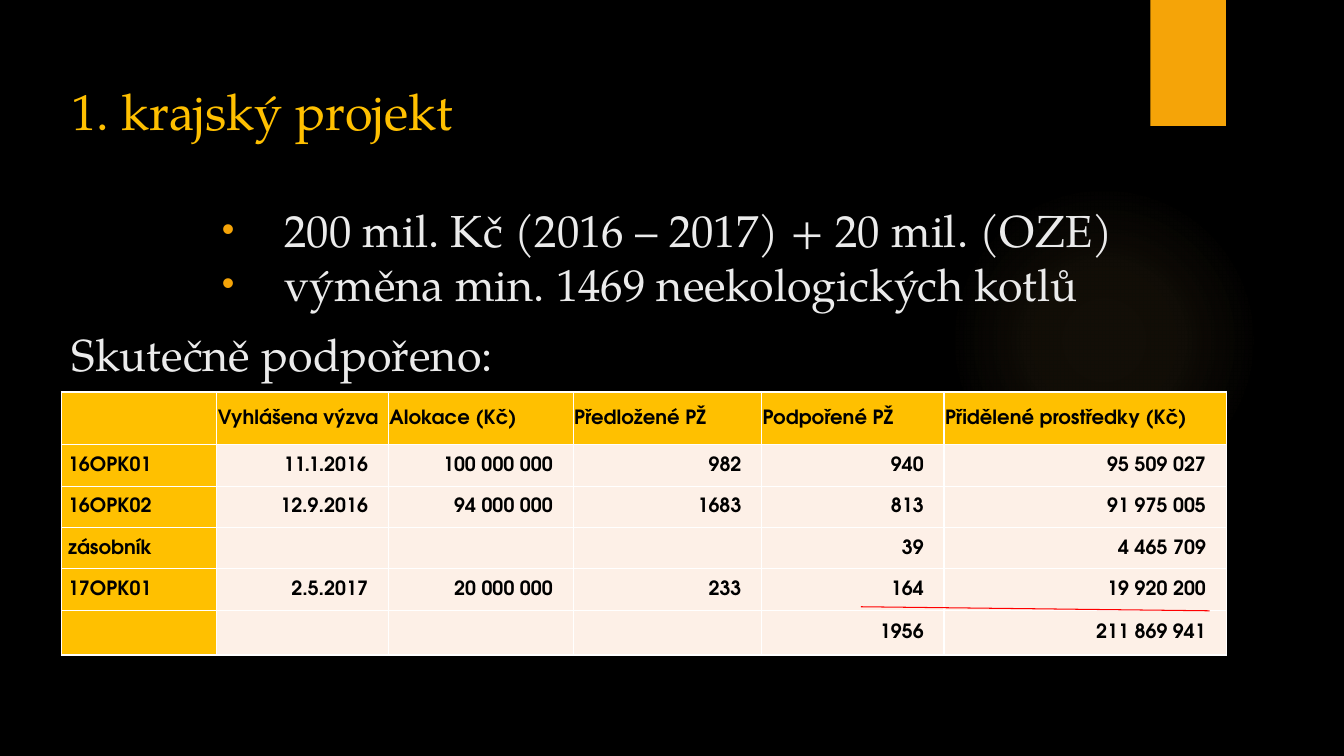
from lxml import etree
from pptx import Presentation, util as u
from pptx.dml.color import RGBColor
from pptx.enum import shapes, text
from pptx.oxml import ns, parse_xml

GOLD, CREAM, WHITE, BLACK = "FFC000", "FDF0E7", "FFFFFF", "000000"
LIGHT, ORANGE, GLOW, RED = "EBEBEB", "F5A408", "FAC96A", "FF0000"
SERIF, SANS = "TeX Gyre Pagella", "TeX Gyre Adventor"
NAMESPACE = "http://schemas.openxmlformats.org/drawingml/2006/main"


def color(value):
    return RGBColor.from_string(value)


def assign(target, values):
    for name, value in values.items():
        setattr(target, name, value)


def add_xml(parent, tag, **attributes):
    return etree.SubElement(parent, ns.qn(tag), attributes)


class Composer:
    title = {"name": SERIF, "size": u.Pt(36)}
    body = {"name": SERIF, "size": u.Pt(32)}
    cell = {"name": SANS, "size": u.Pt(14), "bold": True}

    def __init__(self, deck):
        self.page = deck.slides.add_slide(deck.slide_layouts[6])

    def background(self, fill):
        self.page.background.fill.solid()
        self.page.background.fill.fore_color.rgb = color(fill)

    def add_span(self, para, words, style, ink):
        span = para.add_run()
        span.text = words
        assign(span.font, style)
        span.font.color.rgb = color(ink)

    def shape(self, kind, frame, fill):
        shape = self.page.shapes.add_shape(kind, *map(u.Pt, frame))
        shape.shadow.inherit = False
        shape.fill.solid()
        shape.fill.fore_color.rgb = color(fill)
        shape.line.fill.background()
        return shape

    def glow(self, frame, fill, stops):
        shape = self.shape(shapes.MSO_SHAPE.OVAL, frame, fill)
        marks = "".join(
            f'<a:gs pos="{place * 1000}"><a:srgbClr val="{fill}">'
            f'<a:alpha val="{alpha * 1000}"/></a:srgbClr></a:gs>'
            for place, alpha in stops)
        gradient = parse_xml(
            f'<a:gradFill xmlns:a="{NAMESPACE}"><a:gsLst>{marks}</a:gsLst>'
            '<a:path path="circle"><a:fillToRect l="50000" t="50000" '
            'r="50000" b="50000"/></a:path></a:gradFill>')
        solid = shape._element.spPr.find(ns.qn("a:solidFill"))
        solid.getparent().replace(solid, gradient)

    def bullet(self, para):
        properties = para._p.get_or_add_pPr()
        for name, value in {"marL": 152, "indent": -44.6}.items():
            properties.set(name, str(u.Pt(value)))
        add_xml(add_xml(properties, "a:buClr"), "a:srgbClr", val=ORANGE)
        add_xml(properties, "a:buSzPct", val="80000")
        add_xml(properties, "a:buFont", typeface="Arial")
        add_xml(properties, "a:buChar", char="•")

    def text(self, frame, lines):
        box = self.page.shapes.add_textbox(*map(u.Pt, frame)).text_frame
        box.word_wrap = True
        for number, (words, style, ink, before, bulleted) in enumerate(lines):
            para = box.add_paragraph() if number else box.paragraphs[0]
            if bulleted:
                self.bullet(para)
            if before:
                para.space_before = u.Pt(before)
            self.add_span(para, words, style, ink)

    def border(self, cell, ink):
        properties = cell._tc.get_or_add_tcPr()
        for side in ("L", "R", "T", "B"):
            line = add_xml(properties, f"a:ln{side}", w=str(u.Pt(1)))
            add_xml(add_xml(line, "a:solidFill"), "a:srgbClr", val=ink)

    def table(self, frame, widths, heights, rows):
        grid = self.page.shapes.add_table(
            len(rows), len(widths), *map(u.Pt, frame)).table
        assign(grid, {"first_row": False, "horz_banding": False})
        for column, width in zip(grid.columns, widths):
            column.width = u.Pt(width)
        for row, height in zip(grid.rows, heights):
            row.height = u.Pt(height)
        for r, values in enumerate(rows):
            for c, words in enumerate(values):
                cell = grid.cell(r, c)
                label = r == 0 or c == 0
                self.border(cell, WHITE)
                cell.fill.solid()
                cell.fill.fore_color.rgb = color(GOLD if label else CREAM)
                assign(cell, {
                    "margin_left": u.Pt(0.7 if c else 4.6),
                    "margin_right": u.Pt(0.7 if label else 14.4),
                    "margin_top": u.Pt(0.7),
                    "margin_bottom": 0,
                    "vertical_anchor": text.MSO_ANCHOR.MIDDLE,
                })
                if words:
                    para = cell.text_frame.paragraphs[0]
                    if not label:
                        para.alignment = text.PP_ALIGN.RIGHT
                    self.add_span(para, words, self.cell, BLACK)

    def line(self, ends, ink, width):
        line = self.page.shapes.add_connector(
            shapes.MSO_CONNECTOR.STRAIGHT, *map(u.Pt, ends))
        line.line.color.rgb = color(ink)
        line.line.width = u.Pt(width)
        add_xml(line._element.spPr, "a:effectLst")


def main():
    deck = Presentation()
    assign(deck, {"slide_width": u.Pt(960), "slide_height": u.Pt(540)})
    slide = Composer(deck)
    slide.background(BLACK)
    slide.glow((677.5, 131.8, 221.8, 221.8), GLOW, [(0, 7), (36, 6), (69, 0)])
    slide.shape(shapes.MSO_SHAPE.RECTANGLE, (821.7, 0, 54, 90), ORANGE)
    slide.text((44, 54, 832, 475), [
        ("1. krajský projekt", slide.title, GOLD, 0, False),
        ("200 mil. Kč (2016 – 2017) + 20 mil. (OZE)",
         slide.body, LIGHT, 44, True),
        ("výměna min. 1469 neekologických kotlů",
         slide.body, LIGHT, 0, True),
        ("Skutečně podpořeno:", slide.body, LIGHT, 12, False),
    ])
    slide.table(
        (44, 280, 832, 188),
        [110.9, 122.6, 132, 134.6, 130.3, 201.6],
        [37.4, 30, 29.5, 29.5, 29.5, 32],
        [
            ["", "Vyhlášena výzva", "Alokace (Kč)", "Předložené PŽ",
             "Podpořené PŽ", "Přidělené prostředky (Kč)"],
            ["16OPK01", "11.1.2016", "100 000 000", "982", "940",
             "95 509 027"],
            ["16OPK02", "12.9.2016", "94 000 000", "1683", "813",
             "91 975 005"],
            ["zásobník", "", "", "", "39", "4 465 709"],
            ["17OPK01", "2.5.2017", "20 000 000", "233", "164",
             "19 920 200"],
            ["", "", "", "", "1956", "211 869 941"],
        ])
    slide.line((614.9, 433.4, 864, 436.3), RED, 0.75)
    deck.save("out.pptx")


if __name__ == "__main__":
    main()
